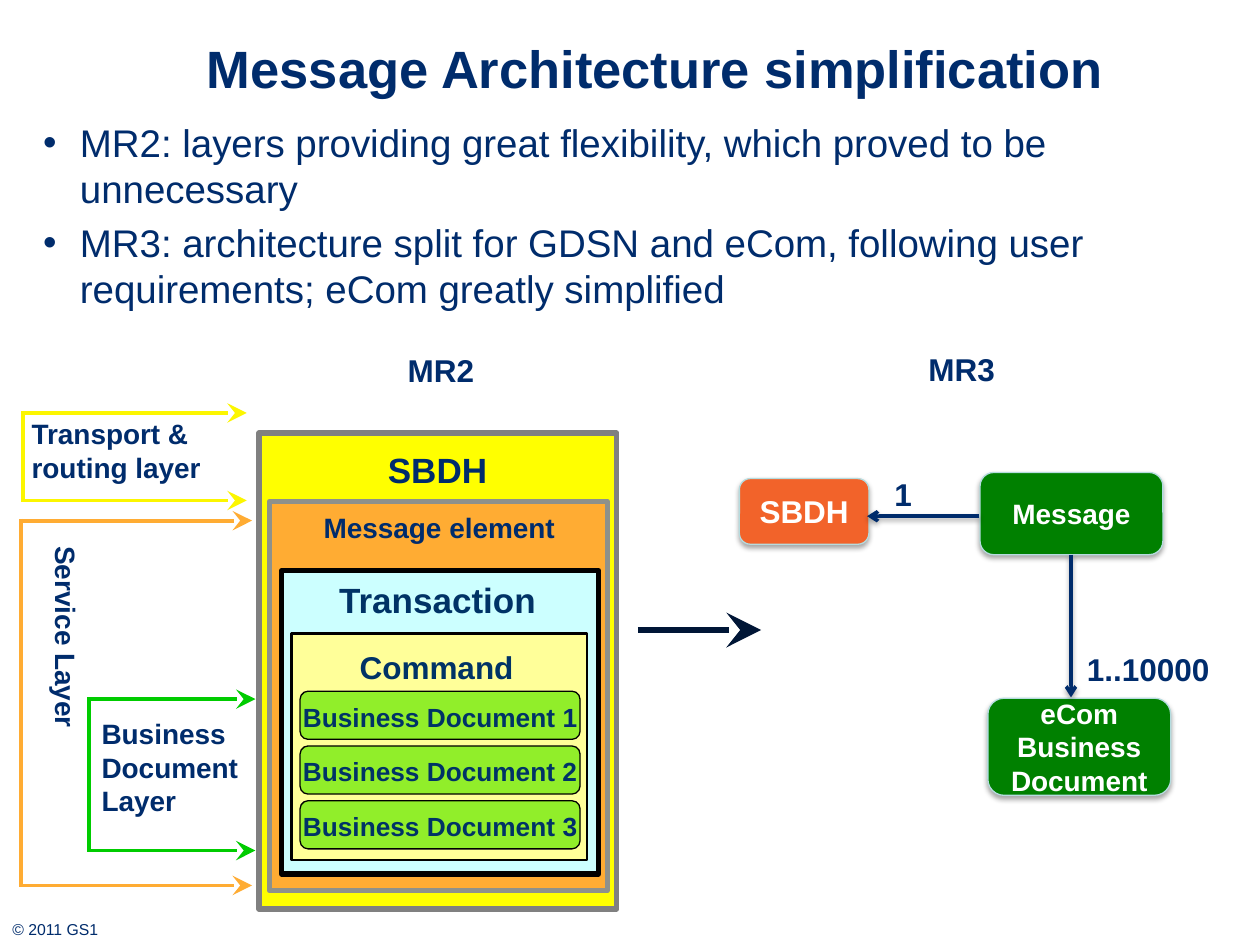
from lxml import etree
from pptx import Presentation
from pptx.dml.color import RGBColor
from pptx.enum import shapes, text
from pptx.oxml import ns
from pptx.util import Pt

COLORS = {
    "navy": "002C6C", "ink": "003366", "arrow": "001636", "white": "FFFFFF",
    "black": "000000", "transport": "FCF600", "service": "FFAC33",
    "business": "00CC00", "header": "FFFF00", "gray": "808080",
    "stone": "8E918B", "transaction": "CCFFFF", "command": "FFFF99",
    "document": "91EE2A", "green": "008000", "orange": "F2632A", "edge": "B6DCDF",
}
ALIGN = text.PP_ALIGN
ANCHOR = text.MSO_ANCHOR
SHAPE = shapes.MSO_SHAPE


def rgb(name):
    """Return the colour that has this name."""
    return RGBColor.from_string(COLORS[name])


def add_child(parent, tag, **attributes):
    """Append a DrawingML element with the given attributes."""
    child = etree.SubElement(parent, ns.qn(tag))
    for key, value in attributes.items():
        child.set(key, str(value))
    return child


def cast_shadow(effects):
    """Put a soft shadow that falls straight down in an effect list."""
    shadow = add_child(effects, "a:outerShdw", blurRad=Pt(3.1), dist=Pt(1.8),
                       dir=5400000, algn="ctr", rotWithShape=0)
    add_child(add_child(shadow, "a:srgbClr", val=COLORS["black"]), "a:alpha", val=35000)


def write(frame, lines, size, color="navy", bold=True, align=ALIGN.LEFT,
          anchor=ANCHOR.TOP, margin=None, wrap=True):
    """Fill a frame with paragraphs, each a list of (words, colour) or a string."""
    layout = {"word_wrap": wrap, "auto_size": text.MSO_AUTO_SIZE.NONE,
              "vertical_anchor": anchor}
    if margin is not None:
        sides = ("left", "top", "right", "bottom")
        layout.update({f"margin_{side}": Pt(margin) for side in sides})
    for key, value in layout.items():
        setattr(frame, key, value)
    for index, line in enumerate(lines):
        paragraph = frame.add_paragraph() if index else frame.paragraphs[0]
        paragraph.alignment = align
        paragraph.space_before = Pt(0)
        for words, shade in [(line, color)] if isinstance(line, str) else line:
            run = paragraph.add_run()
            run.text = words
            for key, value in {"name": "Arial", "size": Pt(size), "bold": bold}.items():
                setattr(run.font, key, value)
            run.font.color.rgb = rgb(shade)


def add_label(slide, box, words, size, **style):
    """Add a text box and return its frame."""
    frame = slide.shapes.add_textbox(*map(Pt, box)).text_frame
    write(frame, [words], size, **style)
    return frame


def add_block(slide, box, fill, line, width, kind=SHAPE.RECTANGLE, shadow=False):
    """Add a filled and outlined shape."""
    block = slide.shapes.add_shape(kind, *map(Pt, box))
    block.fill.solid()
    block.fill.fore_color.rgb = rgb(fill)
    block.line.color.rgb = rgb(line)
    block.line.width = Pt(width)
    block.shadow.inherit = False
    if shadow:
        cast_shadow(block.element.spPr.find(ns.qn("a:effectLst")))
    return block


def add_line(slide, start, end, color, width, head=None, scale="lg", shadow=False):
    """Add a straight line, with an arrowhead at its end if one is named."""
    line = slide.shapes.add_connector(shapes.MSO_CONNECTOR.STRAIGHT,
                                      *map(Pt, (*start, *end)))
    line.line.color.rgb = rgb(color)
    line.line.width = Pt(width)
    if head:
        outline = line.element.spPr.find(ns.qn("a:ln"))
        add_child(outline, "a:tailEnd", type=head, w=scale, len=scale)
    effects = add_child(line.element.spPr, "a:effectLst")
    if shadow:
        cast_shadow(effects)


def add_heading(slide, box):
    """Place the title and the two bullets."""
    left, top, width, height = box
    title, body = slide.placeholders
    places = [(title, (left + 93.5, top, 557, 60)),
              (body, (left, top + 56, width, height - 56))]
    for holder, place in places:
        for key, value in zip(("left", "top", "width", "height"), place):
            setattr(holder, key, Pt(value))
    write(title.text_frame, ["Message Architecture simplification"], 30,
          anchor=ANCHOR.MIDDLE)
    write(body.text_frame, [
        "MR2: layers providing great flexibility, which proved to be unnecessary",
        "MR3: architecture split for GDSN and eCom, following user requirements; "
        "eCom greatly simplified",
    ], 22, bold=False)
    for index, paragraph in enumerate(body.text_frame.paragraphs):
        paragraph.space_before = Pt(4.4 * index)
        properties = paragraph._p.get_or_add_pPr()
        properties.set("marL", str(Pt(21)))
        properties.set("indent", str(Pt(-21)))


def add_bracket(slide, box, color):
    """Draw a bracket whose two arms point right."""
    left, top, width, height = box
    add_line(slide, (left, top - 1), (left, top + height + 1), color, 2.25)
    for arm in (top, top + height):
        add_line(slide, (left, arm), (left + width, arm), color, 2.25, "stealth")


def add_layers(slide, box):
    """Place the three layer brackets and their names."""
    left, top, width, height = box
    add_bracket(slide, (left + 1, top, 128, 50), "transport")
    add_bracket(slide, (left, top + 61.5, 132, height - 61.5), "service")
    add_bracket(slide, (left + 39, top + 163.5, width - 39, 86.5), "business")
    add_label(slide, (left - 1, top - 1.5, 133, 46), "Transport & routing layer", 16)
    service = add_label(slide, (left + 5, top + 69, 34, 195), "Service Layer", 16)
    service._txBody.bodyPr.set("vert", "eaVert")
    add_label(slide, (left + 39, top + 170, 103, 66), "Business Document Layer", 16)


def add_nested_message(slide, box):
    """Place the MR2 heading and its nested message parts."""
    left, top, width, height = box
    centre = {"align": ALIGN.CENTER, "margin": 0}
    layers = [
        ((0, 0, width, height), "header", "gray", 3),
        ((6, 39, 193, 222.5), "service", "stone", 3),
        ((13, 78.5, 181, 173.5), "transaction", "black", 3),
        ((18.5, 114.5, 169, 129.5), "command", "black", 1.5),
    ]
    for (x, y, w, h), *look in layers:
        add_block(slide, (left + x, top + y, w, h), *look)
    names = [("SBDH", 20, "navy", 5, 194, 7, 28), ("Message element", 16, "navy", 7, 192, 44, 19),
             ("Transaction", 20, "ink", 7, 190, 83, 24), ("Command", 18, "ink", 7, 189, 123, 22)]
    for words, size, color, x, w, y, h in names:
        anchor = ANCHOR.MIDDLE if words == "SBDH" else ANCHOR.TOP
        add_label(slide, (left + x, top + y, w, h), words, size, color=color,
                  anchor=anchor, **centre)
    for number, shade in enumerate(("navy", "ink", "navy"), 1):
        y = top + 147.5 + 31.3 * (number - 1)
        add_block(slide, (left + 23.5, y, 160, 27.5), "document", "black", 0.75,
                  SHAPE.ROUNDED_RECTANGLE)
        add_label(slide, (left + 24.5, y + 5.5, 158, 18),
                  [("Business Document", "ink"), (f" {number}", shade)], 15,
                  wrap=False, **centre)
    add_label(slide, (left + 75, top - 50.5, 58, 29), "MR2", 18, align=ALIGN.CENTER)


def add_split_message(slide, box):
    """Place the MR3 heading, its three message parts and their links."""
    left, top, width, height = box
    cards = [
        ((142, height - 55.5, 104.5, 55.5), "green", ["eCom", "Business", "Document"], 16),
        ((137.5, 1.5, 104.5, 47), "green", ["Message"], 16),
        ((0, 5, 74, 37.5), "orange", ["SBDH"], 18),
    ]
    for (x, y, w, h), fill, words, size in cards:
        card = add_block(slide, (left + x, top + y, w, h), fill, "edge", 0.75,
                         SHAPE.ROUNDED_RECTANGLE, shadow=True)
        write(card.text_frame, words, size, "white", align=ALIGN.CENTER,
              anchor=ANCHOR.MIDDLE)
    links = [((189.5, 48.5), (189.5, 130)), ((137, 26.5), (73, 26.5))]
    for link in links:
        start, end = [(left + x, top + y) for x, y in link]
        add_line(slide, start, end, "navy", 2, "arrow", "med", shadow=True)
    add_label(slide, (left + 81.5, top - 0.5, 39, 29), "1", 18)
    add_label(slide, (left + width - 88, top + 99.5, 88, 29), "1..10000", 18)
    add_label(slide, (left + 98, top - 72, 58, 29), "MR3", 18, align=ALIGN.CENTER)


def main():
    """Build the slide and save it."""
    deck = Presentation()
    deck.slide_width, deck.slide_height = Pt(720), Pt(540)
    slide = deck.slides.add_slide(deck.slide_layouts[1])
    add_heading(slide, (17.5, 8.5, 702.5, 178))
    add_layers(slide, (12, 236, 134, 270))
    add_nested_message(slide, (148, 247.5, 204.5, 272))
    add_line(slide, (364.5, 360), (435, 360), "arrow", 4, "stealth")
    add_split_message(slide, (422.5, 268.5, 279.5, 186))
    add_label(slide, (0, 522, 175, 18), "© 2011 GS1", 9, bold=False)
    deck.save("out.pptx")


if __name__ == "__main__":
    main()
